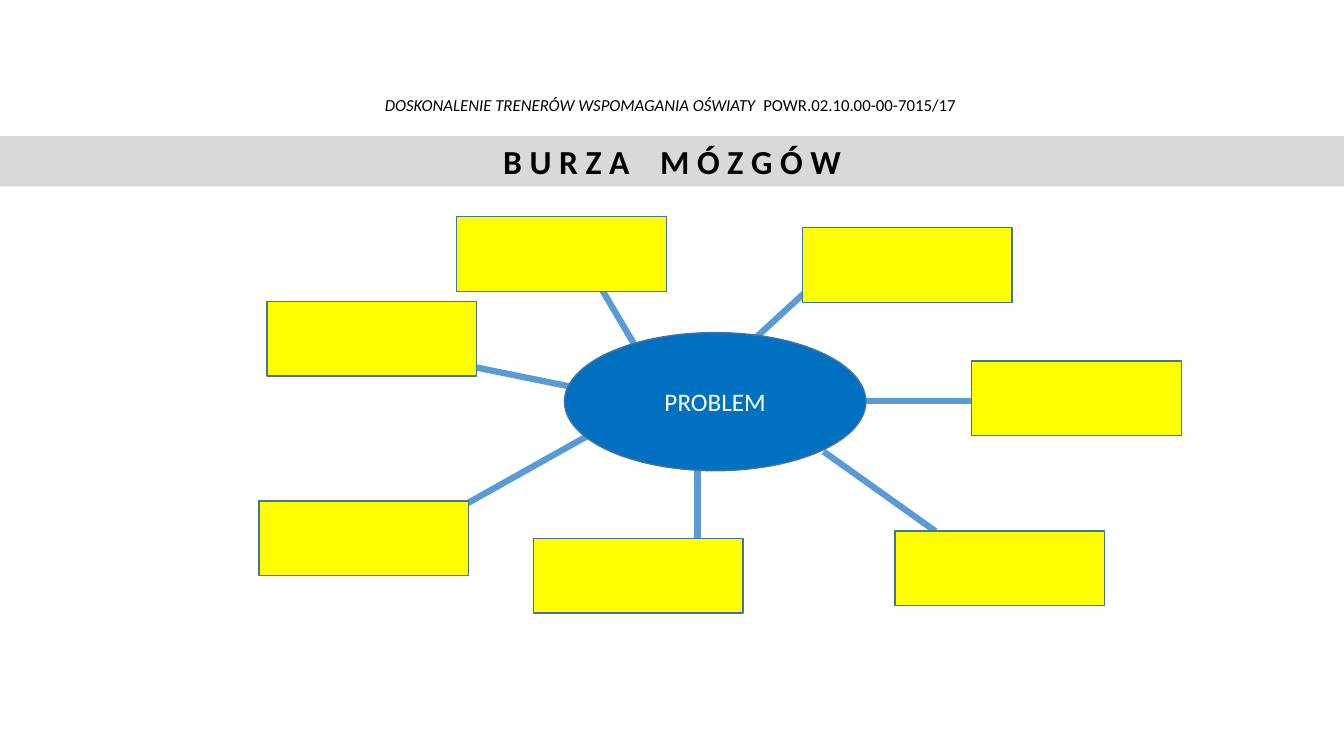
from dataclasses import dataclass
from lxml.etree import SubElement
from pptx import Presentation
from pptx.dml.color import RGBColor
from pptx.enum.shapes import MSO_CONNECTOR, MSO_SHAPE
from pptx.enum.text import MSO_ANCHOR, PP_ALIGN
from pptx.oxml.ns import qn
from pptx.util import Inches, Pt

PROGRAMME = [
    {"text": "DOSKONALENIE TRENERÓW WSPOMAGANIA OŚWIATY", "italic": True},
    {"text": " ", "spacing": 2.7},
    {"text": "POWR.02.10.00-00-7015/17"},
]
TITLE = [
    {"text": "B U R Z A", "bold": True},
    {"text": " ", "bold": True, "spacing": 16.3},
    {"text": "M Ó Z G Ó W", "bold": True},
]
TOPIC = [{"text": "PROBLEM"}]

# Shares of the slide in percent.
PROGRAMME_AREA = (6.9, 0, 85.95, 16.27)
TITLE_BAND = (0, 18, 100, 6.67)
TOPIC_AREA = (42, 44, 22.43, 18.27)
IDEA_SIZE = (15.6, 9.87)
IDEAS = [
    {"corner": (19.88, 39.87), "spoke": (33, 47.73, 42.98, 51.33)},
    {"corner": (72.3, 47.73), "spoke": (64.43, 53.07, 72.83, 53.07)},
    {"corner": (66.6, 70.27), "spoke": (61.28, 59.73, 69.6, 70.27)},
    {"corner": (39.68, 71.2), "spoke": (51.9, 62.27, 51.9, 72.93)},
    {"corner": (33.98, 28.67), "spoke": (44.55, 37.6, 47.48, 46.4)},
    {"corner": (59.7, 30.13), "spoke": (55.5, 45.87, 61.13, 36.67)},
    {"corner": (19.28, 66.27), "spoke": (33.75, 67.6, 43.65, 57.73)},
]


@dataclass(frozen=True)
class Theme:
    font: str = "Calibri"
    ink: str = "000000"
    light: str = "FFFFFF"
    band: str = "D9D9D9"
    topic: str = "0070C0"
    idea: str = "FFFF00"
    outline: str = "43739E"
    spoke: str = "5B9BD5"
    programme_size: int = 12
    title_size: int = 24
    topic_size: int = 18
    outline_width: float = 1
    spoke_width: float = 4.5


THEME = Theme()
deck = Presentation()
deck.slide_width, deck.slide_height = Inches(13.33), Inches(7.5)
slide = deck.slides.add_slide(deck.slide_layouts[6])


def place(shares):
    sides = (deck.slide_width, deck.slide_height) * 2
    return [round(share * side / 100) for share, side in zip(shares, sides)]


def write(box, parts, size, color, anchor):
    frame = box.text_frame
    frame.word_wrap = True
    frame.vertical_anchor = anchor
    paragraph = frame.paragraphs[0]
    paragraph.alignment = PP_ALIGN.CENTER
    for part in parts:
        run = paragraph.add_run()
        run.text = part["text"]
        run.font.name = THEME.font
        run.font.size = Pt(size)
        run.font.bold = part.get("bold", False)
        run.font.italic = part.get("italic", False)
        run.font.color.rgb = RGBColor.from_string(color)
        if "spacing" in part:
            run.font._element.set("spc", str(round(part["spacing"] * 100)))


def draw(kind, area, fill, outline=None):
    shape = slide.shapes.add_shape(kind, *place(area))
    shape.shadow.inherit = False
    shape.fill.solid()
    shape.fill.fore_color.rgb = RGBColor.from_string(fill)
    if outline:
        shape.line.color.rgb = RGBColor.from_string(outline)
        shape.line.width = Pt(THEME.outline_width)
    else:
        shape.line.fill.background()
    return shape


programme = slide.shapes.add_textbox(*place(PROGRAMME_AREA))
write(programme, PROGRAMME, THEME.programme_size, THEME.ink, MSO_ANCHOR.BOTTOM)
programme.text_frame.margin_bottom = Inches(0.08)
programme.text_frame.paragraphs[0].line_spacing = 0.9

for idea in IDEAS:
    spoke = slide.shapes.add_connector(MSO_CONNECTOR.STRAIGHT, *place(idea["spoke"]))
    spoke.line.color.rgb = RGBColor.from_string(THEME.spoke)
    spoke.line.width = Pt(THEME.spoke_width)
    SubElement(spoke._element.spPr, qn("a:effectLst"))

title = draw(MSO_SHAPE.RECTANGLE, TITLE_BAND, THEME.band)
write(title, TITLE, THEME.title_size, THEME.ink, MSO_ANCHOR.TOP)

topic = draw(MSO_SHAPE.OVAL, TOPIC_AREA, THEME.topic, THEME.outline)
write(topic, TOPIC, THEME.topic_size, THEME.light, MSO_ANCHOR.MIDDLE)

for idea in IDEAS:
    draw(MSO_SHAPE.RECTANGLE, idea["corner"] + IDEA_SIZE, THEME.idea, THEME.outline)

deck.save("out.pptx")
